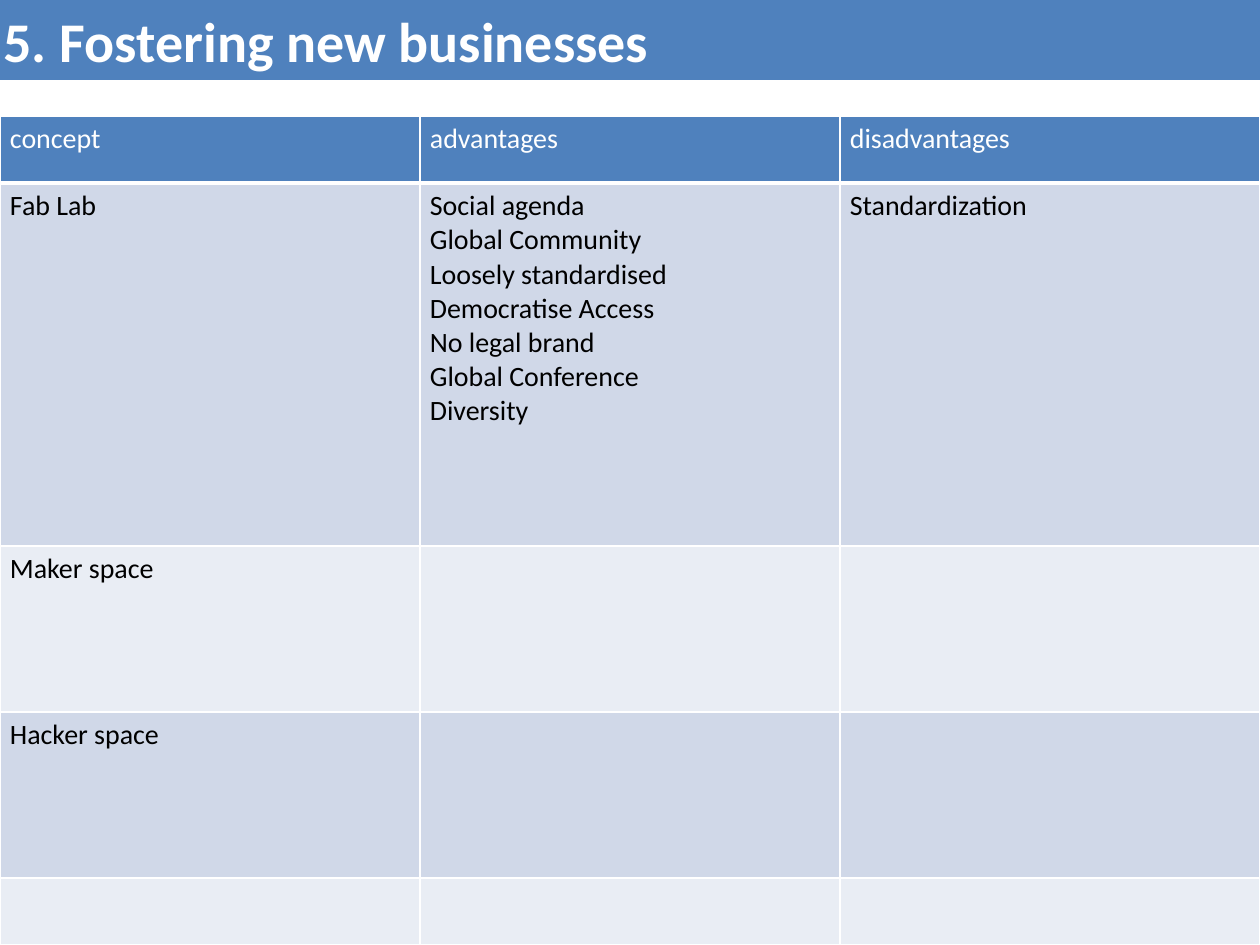
from dataclasses import dataclass

from lxml import etree
from pptx import Presentation
from pptx.dml.color import RGBColor
from pptx.enum import shapes, text
from pptx.oxml import ns
from pptx.util import Emu, Pt

EMU_PER_PX = 914400 / 126


@dataclass(frozen=True)
class Theme:
    font: str = "Calibri"
    title_size: int = 32
    table_size: int = 16
    accent: str = "4F81BD"
    light: str = "FFFFFF"
    dark: str = "000000"
    bands: tuple = ("D0D8E8", "E9EDF4")
    rule: float = 1
    header_rule: float = 3


THEME = Theme()

COLUMN_WIDTH = 420
ROW_HEIGHTS = [67, 363, 166, 166, 67]
HEADINGS = ["concept", "advantages", "disadvantages"]
FAB_LAB_ADVANTAGES = [
    "Social agenda",
    "Global Community",
    "Loosely standardised",
    "Democratise Access",
    "No legal brand",
    "Global Conference",
    "Diversity",
]
CONCEPTS = [
    ["Fab Lab", "\n".join(FAB_LAB_ADVANTAGES), "Standardization"],
    ["Maker space", "", ""],
    ["Hacker space", "", ""],
    ["", "", ""],
]


def px(length):
    return Emu(round(length * EMU_PER_PX))


def fill_with(element, color):
    element.fill.solid()
    element.fill.fore_color.rgb = RGBColor.from_string(color)


def write(frame, words, *, size, color, bold=False):
    frame.text = words
    for paragraph in frame.paragraphs:
        paragraph.alignment = text.PP_ALIGN.LEFT
        font = paragraph.font
        font.name, font.size, font.bold = THEME.font, Pt(size), bold
        font.color.rgb = RGBColor.from_string(color)


def add_border(cell, side, width):
    properties = cell._tc.get_or_add_tcPr()
    line = etree.SubElement(properties, ns.qn(f"a:ln{side}"), w=str(Pt(width)))
    fill = etree.SubElement(line, ns.qn("a:solidFill"))
    etree.SubElement(fill, ns.qn("a:srgbClr"), val=THEME.light)


def add_title(slide, words):
    # Colour band, placed behind the title
    band = slide.shapes.add_shape(
        shapes.MSO_SHAPE.RECTANGLE, 0, 0, px(1260), px(80))
    band.shadow.inherit = False
    fill_with(band, THEME.accent)
    band.line.fill.background()
    slide.shapes._spTree.insert(2, band._element)

    # Title text
    title = slide.shapes.title
    title.left, title.top, title.width, title.height = map(px, (-9, 0, 677, 80))
    frame = title.text_frame
    write(frame, words, size=THEME.title_size, color=THEME.light, bold=True)
    frame.word_wrap = False
    frame.auto_size = text.MSO_AUTO_SIZE.SHAPE_TO_FIT_TEXT
    frame.vertical_anchor = text.MSO_ANCHOR.TOP


def format_cell(cell, words, row):
    is_header = row == 0
    cell.margin_left = cell.margin_right = px(10)
    cell.margin_top = cell.margin_bottom = px(6)
    write(cell.text_frame, words, size=THEME.table_size,
          color=THEME.light if is_header else THEME.dark)
    for side in "LRTB":
        below_header = (row, side) in ((0, "B"), (1, "T"))
        add_border(cell, side, THEME.header_rule if below_header else THEME.rule)
    fill_with(cell, THEME.accent if is_header else THEME.bands[(row - 1) % 2])


def add_comparison(slide, rows):
    width = COLUMN_WIDTH * len(HEADINGS)
    table = slide.shapes.add_table(
        len(rows), len(HEADINGS), 0, px(116), px(width), px(sum(ROW_HEIGHTS))).table
    for column in table.columns:
        column.width = px(COLUMN_WIDTH)
    for index, (entries, height) in enumerate(zip(rows, ROW_HEIGHTS)):
        table.rows[index].height = px(height)
        for cell, words in zip(table.rows[index].cells, entries):
            format_cell(cell, words, index)


def main():
    deck = Presentation()
    deck.slide_width, deck.slide_height = px(1260), px(945)
    slide = deck.slides.add_slide(deck.slide_layouts[5])
    add_title(slide, "5. Fostering new businesses")
    add_comparison(slide, [HEADINGS, *CONCEPTS])
    deck.save("out.pptx")


if __name__ == "__main__":
    main()
